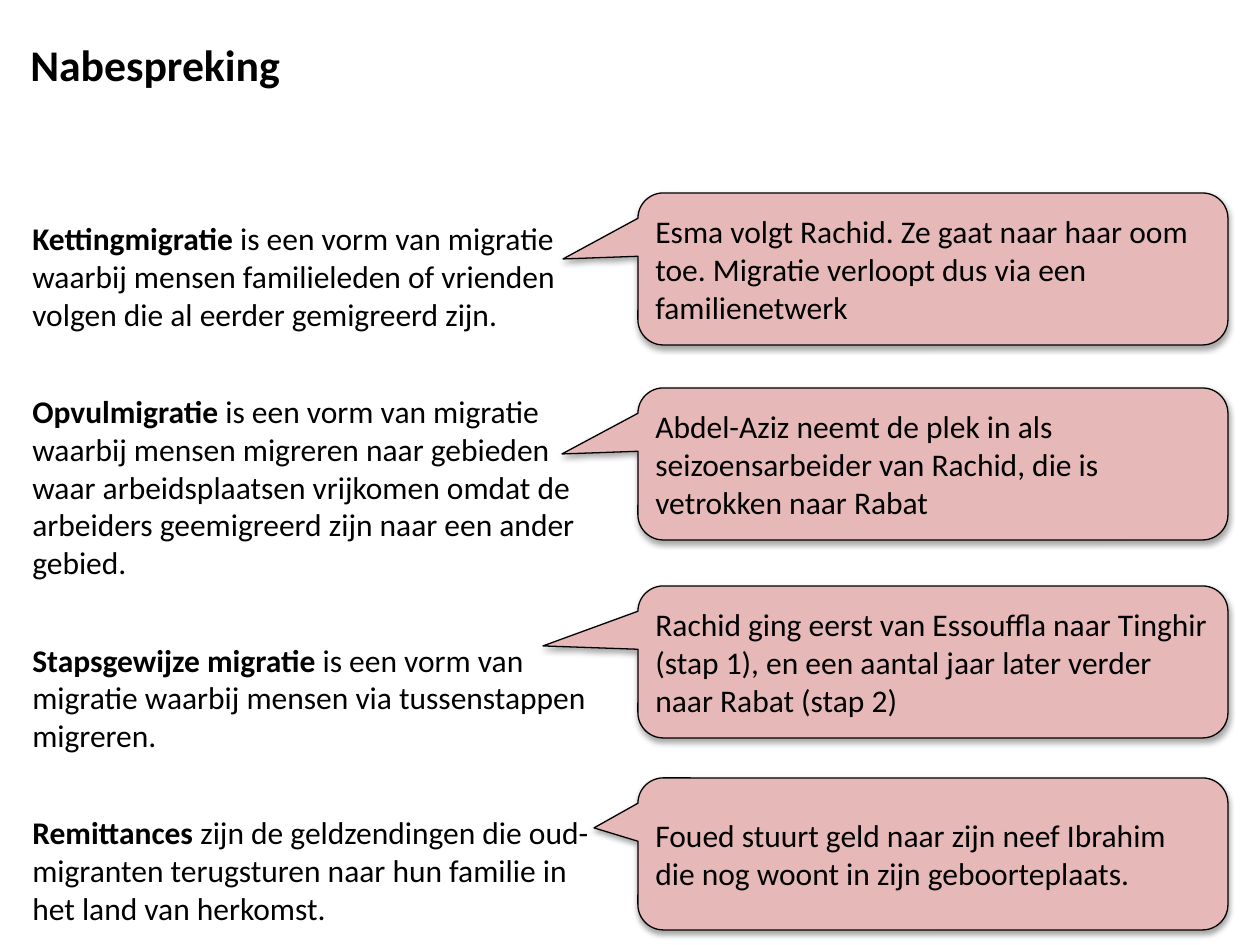
from lxml import etree
from pptx import Presentation
from pptx.dml.color import RGBColor
from pptx.enum.shapes import MSO_SHAPE
from pptx.enum.text import MSO_ANCHOR, MSO_AUTO_SIZE, PP_ALIGN
from pptx.oxml.ns import qn
from pptx.util import Emu, Pt

CALLOUT = MSO_SHAPE.ROUNDED_RECTANGULAR_CALLOUT
MIDDLE = MSO_ANCHOR.MIDDLE
LEFT = PP_ALIGN.LEFT
GROW = MSO_AUTO_SIZE.SHAPE_TO_FIT_TEXT

PX_PER_INCH = 126
COLORS = {"text": "000000", "line": "000000", "callout": "E6B9B8", "shadow": "000000"}


def px(length):
    return Emu(round(length * 914400 / PX_PER_INCH))


class SlideBuilder:
    font = "Calibri"
    body_size = 18
    title_size = 25

    def __init__(self, slide):
        self.slide = slide

    def color(self, name):
        return RGBColor.from_string(COLORS[name])

    def run(self, paragraph, text, size, bold=False):
        run = paragraph.add_run()
        run.text = text
        run.font.name = self.font
        run.font.size = Pt(size)
        run.font.bold = bold
        run.font.color.rgb = self.color("text")

    def text_frame(self, left, top, width, height, wrap):
        box = self.slide.shapes.add_textbox(px(left), px(top), px(width), px(height))
        box.text_frame.word_wrap = wrap
        box.text_frame.auto_size = GROW
        return box.text_frame

    def title(self, text, *place):
        frame = self.text_frame(*place, wrap=False)
        self.run(frame.paragraphs[0], text, self.title_size, bold=True)

    def definitions(self, entries, *place, gap):
        frame = self.text_frame(*place, wrap=True)
        for index, (term, meaning) in enumerate(entries):
            paragraph = frame.add_paragraph() if index else frame.paragraphs[0]
            paragraph.space_after = Pt(gap)
            self.run(paragraph, term + " ", self.body_size, bold=True)
            self.run(paragraph, meaning, self.body_size)

    def soft_shadow(self, shape):
        shape.shadow.inherit = False
        effects = shape._element.spPr.find(qn("a:effectLst"))
        shadow = etree.SubElement(effects, qn("a:outerShdw"), blurRad="40000",
                                  dist="23000", dir="5400000", rotWithShape="0")
        tint = etree.SubElement(shadow, qn("a:srgbClr"), val=COLORS["shadow"])
        etree.SubElement(tint, qn("a:alpha"), val="35000")

    def callout(self, text, tip_x, tip_y, left, top, width, height):
        """The tip is given in px on the slide."""
        bubble = self.slide.shapes.add_shape(CALLOUT, px(left), px(top), px(width), px(height))
        bubble.adjustments[0] = (tip_x - left) / width - 0.5
        bubble.adjustments[1] = (tip_y - top) / height - 0.5
        bubble.fill.solid()
        bubble.fill.fore_color.rgb = self.color("callout")
        bubble.line.color.rgb = self.color("line")
        bubble.line.width = Pt(0.75)
        self.soft_shadow(bubble)
        frame = bubble.text_frame
        frame.word_wrap = True
        frame.vertical_anchor = MIDDLE
        frame.margin_left = frame.margin_right = px(10)
        frame.margin_top = frame.margin_bottom = px(6)
        frame.paragraphs[0].alignment = LEFT
        self.run(frame.paragraphs[0], text, self.body_size)


DEFINITIONS = [
    ("Kettingmigratie", "is een vorm van migratie waarbij mensen familieleden of vrienden "
     "volgen die al eerder gemigreerd zijn."),
    ("Opvulmigratie", "is een vorm van migratie waarbij mensen migreren naar gebieden waar "
     "arbeidsplaatsen vrijkomen omdat de arbeiders geemigreerd zijn naar een ander gebied."),
    ("Stapsgewijze migratie", "is een vorm van migratie waarbij mensen via tussenstappen "
     "migreren."),
    ("Remittances", "zijn de geldzendingen die oud-migranten terugsturen naar hun familie in "
     "het land van herkomst."),
]

# Top of the callout, its tip (x, y) and its text
EXAMPLES = [
    (193, 563, 259, "Esma volgt Rachid. Ze gaat naar haar oom toe. Migratie verloopt dus via "
     "een familienetwerk"),
    (388, 562, 454, "Abdel-Aziz neemt de plek in als seizoensarbeider van Rachid, die is "
     "vetrokken naar Rabat"),
    (586, 543, 646, "Rachid ging eerst van Essouffla naar Tinghir (stap 1), en een aantal jaar "
     "later verder naar Rabat (stap 2)"),
    (778, 594, 828, "Foued stuurt geld naar zijn neef Ibrahim die nog woont in zijn "
     "geboorteplaats."),
]


def main():
    presentation = Presentation()
    presentation.slide_width = px(1260)
    presentation.slide_height = px(945)
    builder = SlideBuilder(presentation.slides.add_slide(presentation.slide_layouts[6]))

    # Title
    builder.title("Nabespreking", 18, 32, 278, 66)

    # Definitions on the left
    builder.definitions(DEFINITIONS, 20, 213, 602, 726, gap=34)

    # Examples on the right, each pointing at its definition
    for top, tip_x, tip_y, example in EXAMPLES:
        builder.callout(example, tip_x, tip_y, 638, top, 590, 152)

    presentation.save("out.pptx")


if __name__ == "__main__":
    main()
